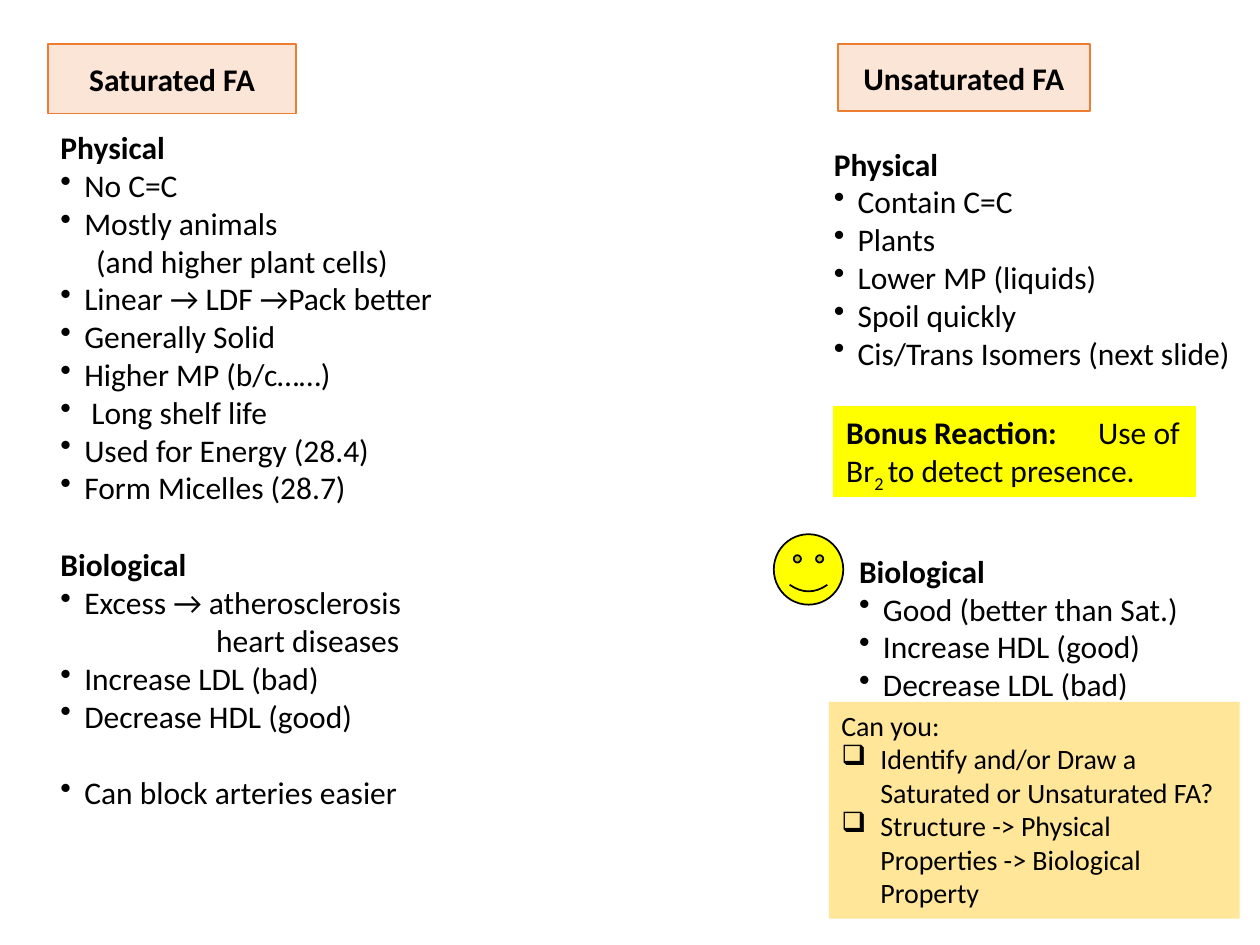
"""Build a slide comparing saturated and unsaturated fatty acids."""
from lxml import etree
from pptx import Presentation, util as u
from pptx.dml import color
from pptx.enum import shapes, text
from pptx.oxml import ns

FONT = "Calibri"
COLORS = {"text": "000000", "peach": "FBE5D6", "orange": "ED7D31",
          "yellow": "FFFF00", "sand": "FFE699"}

STYLES = {
    "head": {"bold": True},
    "title": {"bold": True, "align": text.PP_ALIGN.CENTER},
    "plain": {},
    "dot": {"bullet": "•", "margin": 0.48},
    "dot after gap": {"bullet": "•", "margin": 0.48, "before": 22},
    "box": {"bullet": "❑", "margin": 0.79},
    "continued": {"margin": 0.72, "first": 0},
    "far continued": {"margin": 3.14, "first": 0},
}

LISTS = [
    ((16.56, 2.79, 8.59, 4.88), [
        ("head", "Physical"), ("dot", "Contain C=C"), ("dot", "Plants"),
        ("dot", "Lower MP (liquids)"), ("dot", "Spoil quickly"),
        ("dot", "Cis/Trans Isomers (next slide)")]),
    ((0.97, 2.46, 8.2, 7.95), [
        ("head", "Physical"), ("dot", "No C=C"), ("dot", "Mostly animals"),
        ("continued", "(and higher plant cells)"),
        ("dot", "Linear → LDF →Pack better"), ("dot", "Generally Solid"),
        ("dot", "Higher MP (b/c……)"), ("dot", " Long shelf life"),
        ("dot", "Used for Energy (28.4)"), ("dot", "Form Micelles (28.7)")]),
    ((0.97, 10.87, 7.65, 5.64), [
        ("head", "Biological"), ("dot", "Excess → atherosclerosis"),
        ("far continued", "heart diseases"), ("dot", "Increase LDL (bad)"),
        ("dot", "Decrease HDL (good)"),
        ("dot after gap", "Can block arteries easier")]),
    ((17.07, 11, 7.04, 4.11), [
        ("head", "Biological"), ("dot", "Good (better than Sat.)"),
        ("dot", "Increase HDL (good)"), ("dot", "Decrease LDL (bad)")]),
]
TITLES = [((16.89, 0.89, 5.08, 1.35), "Unsaturated FA"),
          ((0.97, 0.89, 5, 1.4), "Saturated FA")]
BONUS_AREA = (16.81, 8.2, 7.29, 1.8)
BONUS_TAB = 4.68
BONUS_RUNS = [("Bonus Reaction:", True, 0), ("\tUse of Br", False, 0),
              ("2 ", False, -25000), ("to detect presence.", False, 0)]
QUESTIONS_AREA = (16.71, 14.15, 8.28, 4.37)
QUESTIONS = [("plain", "Can you:"),
             ("box", "Identify and/or Draw a Saturated or Unsaturated FA?"),
             ("box", "Structure -> Physical Properties -> Biological Property")]
SMILEY_AREA = (15.6, 10.77, 1.4, 1.42)


def rgb(name):
    return color.RGBColor.from_string(COLORS[name])


def format_run(run, size, bold=False):
    run.font.name = FONT
    run.font.size = u.Pt(size)
    run.font.bold = bold
    run.font.color.rgb = rgb("text")


def format_paragraph(paragraph, size, bold=False, align=text.PP_ALIGN.LEFT,
                     bullet=None, margin=0, first=None, before=0):
    paragraph.alignment = align
    paragraph.space_before = u.Pt(before)
    properties = paragraph._p.get_or_add_pPr()
    properties.set("marL", str(u.Cm(margin)))
    properties.set("indent", str(u.Cm(-margin if first is None else first)))
    if bullet:
        etree.SubElement(properties, ns.qn("a:buChar"), char=bullet)
    for run in paragraph.runs:
        format_run(run, size, bold)


def write(shape, lines, size=18, anchor=text.MSO_ANCHOR.TOP):
    frame = shape.text_frame
    frame.word_wrap = True
    frame.vertical_anchor = anchor
    frame.text = "\n".join(content for _, content in lines)
    for paragraph, (style, _) in zip(frame.paragraphs, lines):
        format_paragraph(paragraph, size, **STYLES[style])


def add_box(slide, area, fill, line=None, width=1,
            kind=shapes.MSO_SHAPE.RECTANGLE):
    shape = slide.shapes.add_shape(kind, *map(u.Cm, area))
    shape.shadow.inherit = False
    shape.fill.solid()
    shape.fill.fore_color.rgb = rgb(fill)
    if line:
        shape.line.color.rgb = rgb(line)
        shape.line.width = u.Pt(width)
    else:
        shape.line.fill.background()
    return shape


def add_bonus(slide):
    shape = add_box(slide, BONUS_AREA, "yellow", "yellow", 0.75)
    frame = shape.text_frame
    frame.word_wrap = True
    frame.vertical_anchor = text.MSO_ANCHOR.TOP
    paragraph = frame.paragraphs[0]
    format_paragraph(paragraph, 18)
    tabs = etree.SubElement(paragraph._p.get_or_add_pPr(), ns.qn("a:tabLst"))
    etree.SubElement(tabs, ns.qn("a:tab"), pos=str(u.Cm(BONUS_TAB)), algn="l")
    for content, bold, baseline in BONUS_RUNS:
        run = paragraph.add_run()
        run.text = content
        format_run(run, 18, bold)
        if baseline:
            run.font._element.set("baseline", str(baseline))


def main():
    presentation = Presentation()
    presentation.slide_width, presentation.slide_height = u.Cm(25.4), u.Cm(19.05)
    slide = presentation.slides.add_slide(presentation.slide_layouts[6])
    for area, lines in LISTS:
        write(slide.shapes.add_textbox(*map(u.Cm, area)), lines)
    add_bonus(slide)
    for area, title in TITLES:
        write(add_box(slide, area, "peach", "orange"), [("title", title)],
              anchor=text.MSO_ANCHOR.MIDDLE)
    write(add_box(slide, QUESTIONS_AREA, "sand"), QUESTIONS, size=16)
    add_box(slide, SMILEY_AREA, "yellow", "text",
            kind=shapes.MSO_SHAPE.SMILEY_FACE)
    presentation.save("out.pptx")


if __name__ == "__main__":
    main()
